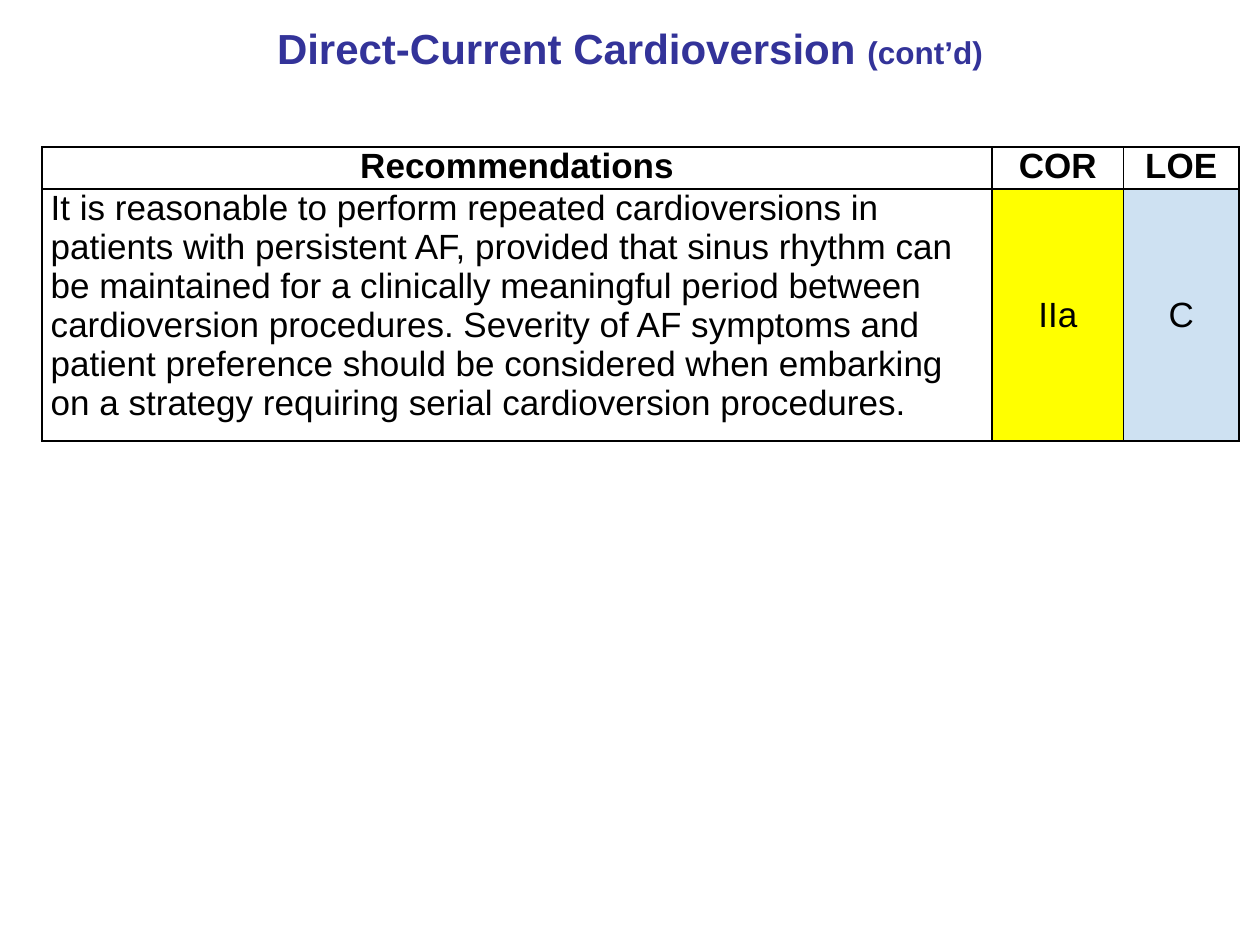
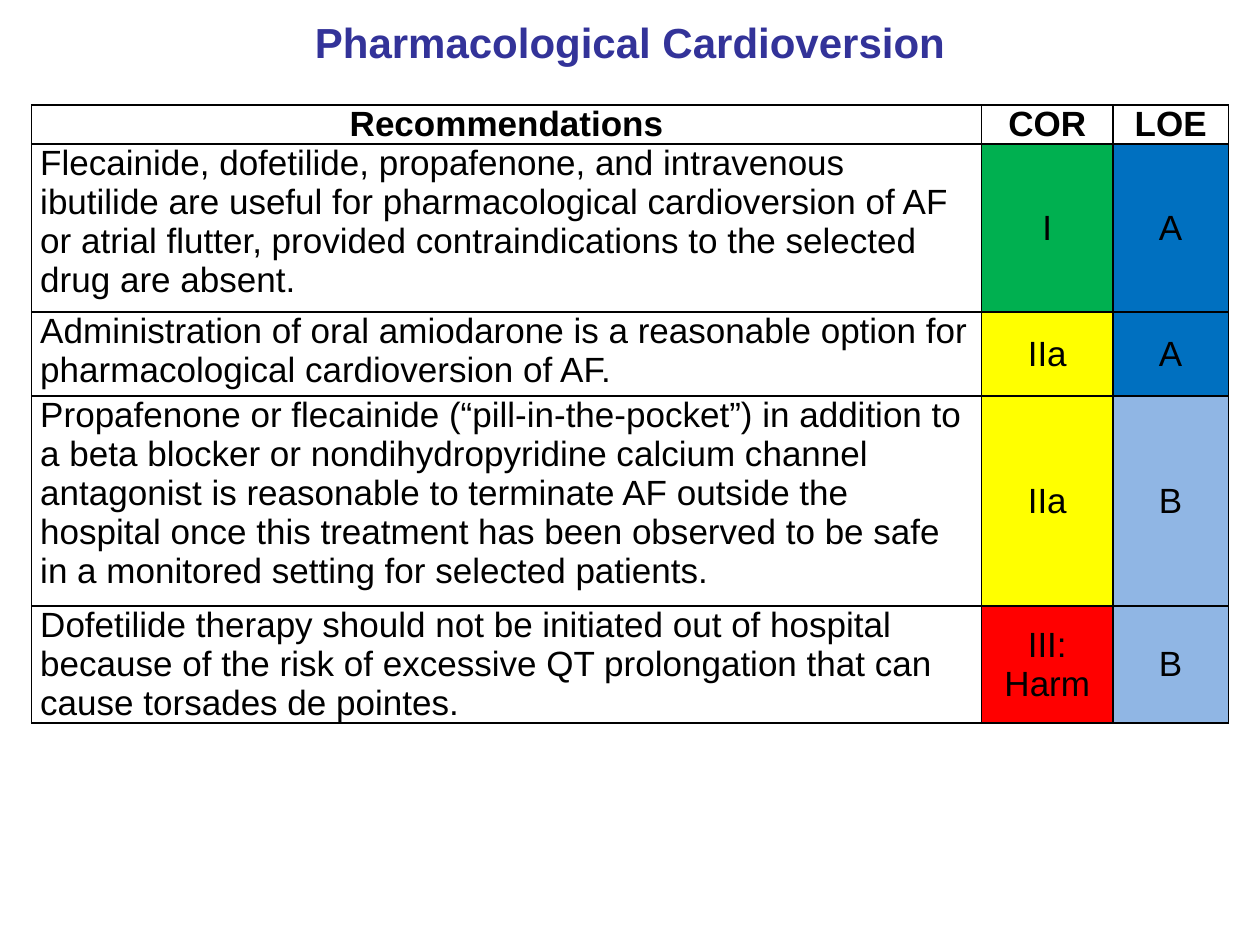
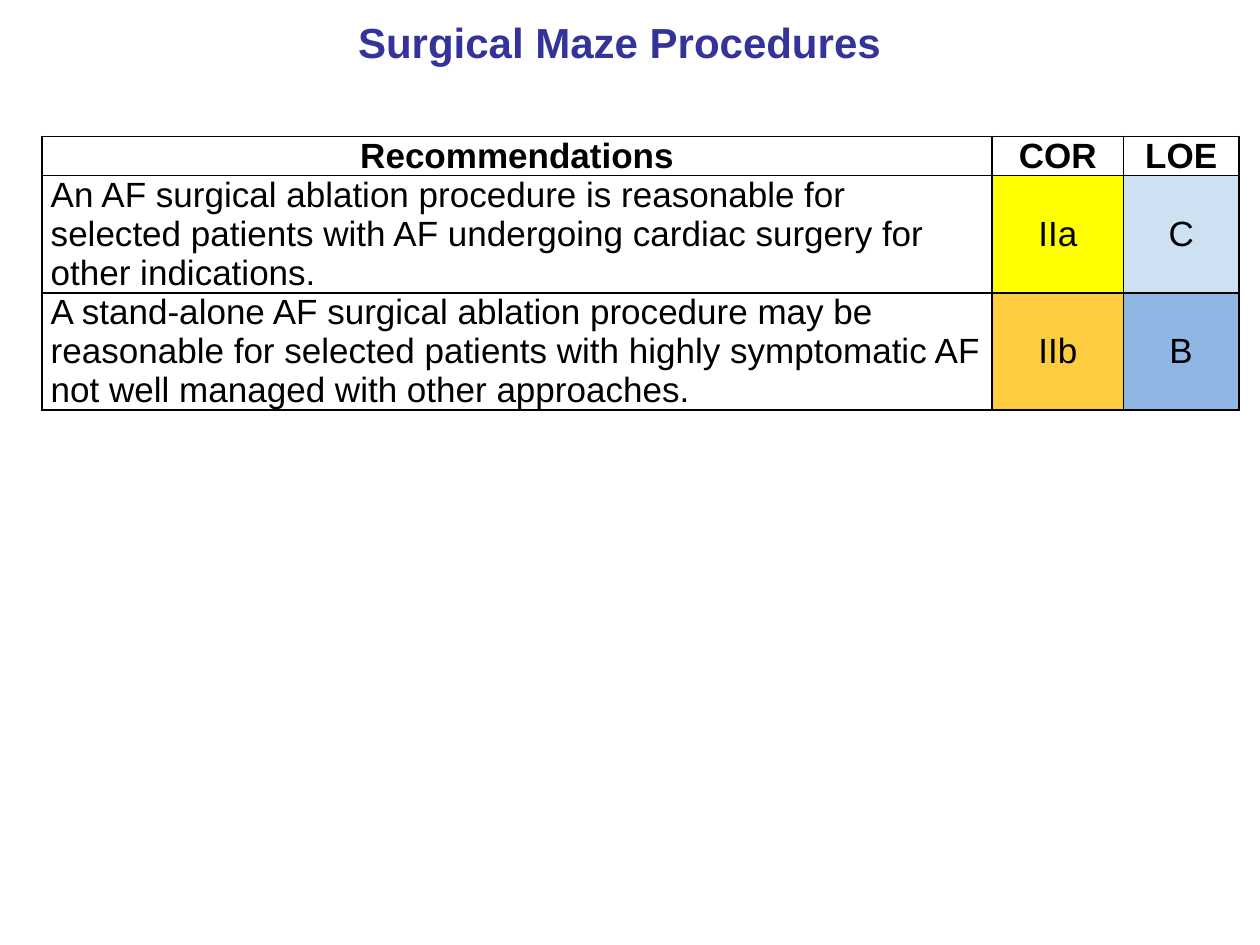
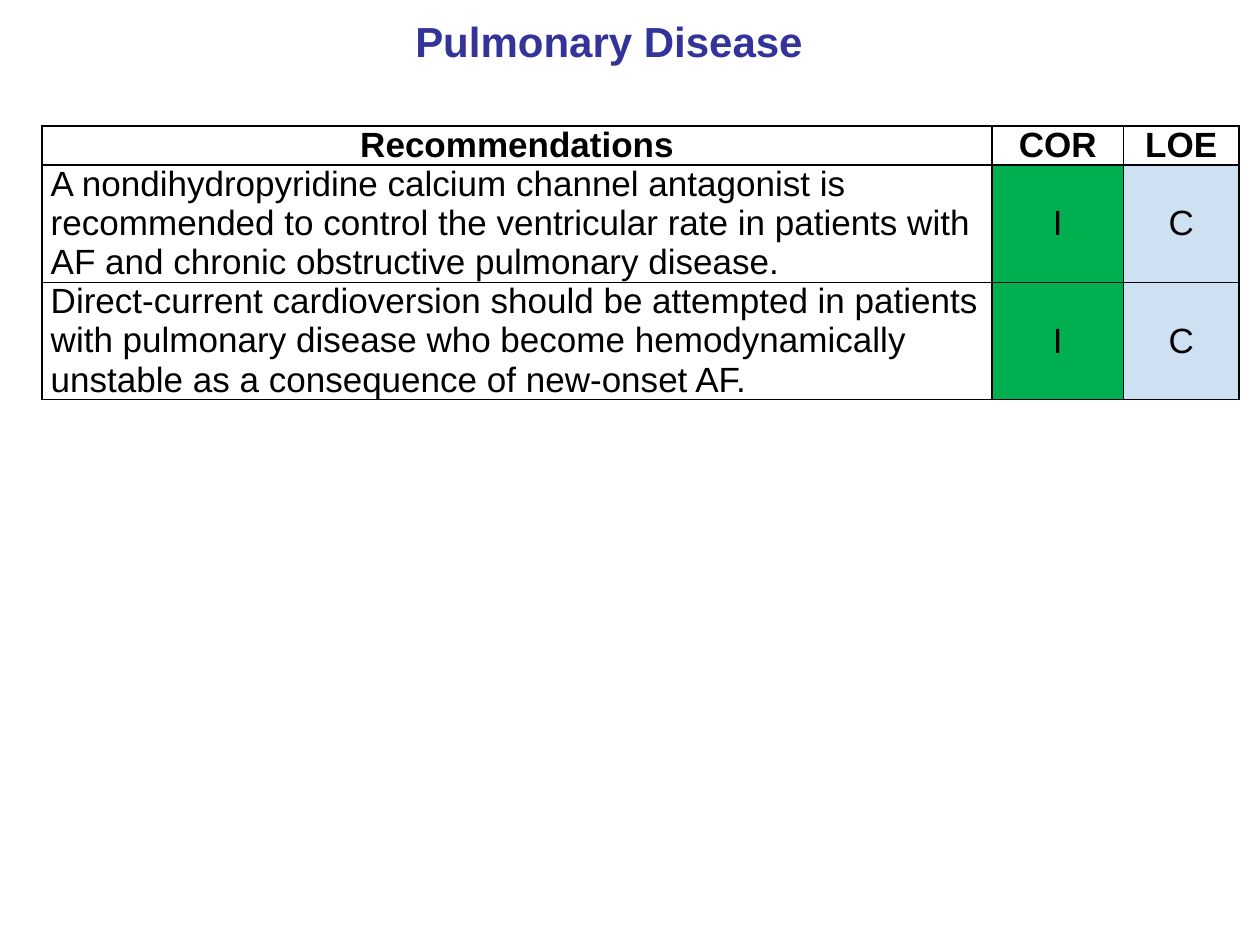
"""Build four slides of cardioversion and rhythm treatment recommendations."""
from lxml.etree import SubElement
from pptx import Presentation
from pptx.dml.color import RGBColor
from pptx.enum.text import MSO_ANCHOR, MSO_AUTO_SIZE, PP_ALIGN
from pptx.oxml.ns import qn
from pptx.util import Pt

COLORS = {
    "title": "333399",
    "text": "000000",
    "border": "000000",
    "I": "00B050",
    "IIa": "FFFF00",
    "IIb": "FDCC3F",
    "III: Harm": "FF0000",
    "A": "0070C0",
    "B": "90B6E4",
    "C": "CEE1F2",
}
FONT = "Arial"
HEADERS = ("Recommendations", "COR", "LOE")
COLUMN_WIDTHS = (543, 75, 66)
CELL_MARGINS = {"margin_left": Pt(5), "margin_right": Pt(5), "margin_top": 0, "margin_bottom": 0}

SLIDES = [
    {
        "title": [("Direct-Current Cardioversion ", 24), ("(cont’d)", 18)],
        "title_box": (36, 0, 648, 54),
        "table_box": (24, 84, 684, 168),
        "row_heights": (24, 144),
        "rows": [
            ("It is reasonable to perform repeated cardioversions in patients with persistent AF, "
             "provided that sinus rhythm can be maintained for a clinically meaningful period between "
             "cardioversion procedures. Severity of AF symptoms and patient preference should be "
             "considered when embarking on a strategy requiring serial cardioversion procedures.",
             "IIa", "C"),
        ],
    },
    {
        "title": [("Pharmacological Cardioversion", 24)],
        "title_box": (36, 0, 648, 48),
        "table_box": (18, 60, 684, 360),
        "row_heights": (22, 96, 48, 120, 66),
        "rows": [
            ("Flecainide, dofetilide, propafenone, and intravenous ibutilide are useful for "
             "pharmacological cardioversion of AF or atrial flutter, provided contraindications to "
             "the selected drug are absent.", "I", "A"),
            ("Administration of oral amiodarone is a reasonable option for pharmacological "
             "cardioversion of AF.", "IIa", "A"),
            ("Propafenone or flecainide (“pill-in-the-pocket”) in addition to a beta blocker or "
             "nondihydropyridine calcium channel antagonist is reasonable to terminate AF outside "
             "the hospital once this treatment has been observed to be safe in a monitored setting "
             "for selected patients.", "IIa", "B"),
            ("Dofetilide therapy should not be initiated out of hospital because of the risk of "
             "excessive QT prolongation that can cause torsades de pointes.", "III: Harm", "B"),
        ],
    },
    {
        "title": [("Surgical Maze Procedures", 24)],
        "title_box": (30, 0, 648, 48),
        "table_box": (24, 78, 684, 168),
        "row_heights": (22, 66, 66),
        "rows": [
            ("An AF surgical ablation procedure is reasonable for selected patients with AF "
             "undergoing cardiac surgery for other indications.", "IIa", "C"),
            ("A stand-alone AF surgical ablation procedure may be reasonable for selected patients "
             "with highly symptomatic AF not well managed with other approaches.", "IIb", "B"),
        ],
    },
    {
        "title": [("Pulmonary Disease", 24)],
        "title_box": (24, 6, 648, 35),
        "table_box": (24, 72, 684, 168),
        "row_heights": (22, 66, 66),
        "rows": [
            ("A nondihydropyridine calcium channel antagonist is recommended to control the "
             "ventricular rate in patients with AF and chronic obstructive pulmonary disease.",
             "I", "C"),
            ("Direct-current cardioversion should be attempted in patients with pulmonary disease "
             "who become hemodynamically unstable as a consequence of new-onset AF.", "I", "C"),
        ],
    },
]


def set_attributes(target, values):
    for name, value in values.items():
        setattr(target, name, value)


def add_run(paragraph, text, size, bold, color):
    run = paragraph.add_run()
    run.text = text
    set_attributes(run.font, {"name": FONT, "size": Pt(size), "bold": bold})
    run.font.color.rgb = RGBColor.from_string(COLORS[color])


def add_title(slide, runs, box):
    title = slide.shapes.title
    set_attributes(title, dict(zip(("left", "top", "width", "height"), map(Pt, box))))
    set_attributes(title.text_frame, {
        "word_wrap": True,
        "auto_size": MSO_AUTO_SIZE.NONE,
        "vertical_anchor": MSO_ANCHOR.MIDDLE,
    })
    paragraph = title.text_frame.paragraphs[0]
    paragraph.alignment = PP_ALIGN.CENTER
    for text, size in runs:
        add_run(paragraph, text, size, True, "title")


def add_borders(cell):
    properties = cell._tc.get_or_add_tcPr()
    for side in ("a:lnL", "a:lnR", "a:lnT", "a:lnB"):
        line = SubElement(properties, qn(side), w=str(Pt(1)))
        fill = SubElement(line, qn("a:solidFill"))
        SubElement(fill, qn("a:srgbClr"), val=COLORS["border"])


def fill_cell(cell, text, is_header, is_grade):
    add_borders(cell)
    set_attributes(cell, CELL_MARGINS)
    if is_grade and not is_header:
        cell.vertical_anchor = MSO_ANCHOR.MIDDLE
        cell.fill.solid()
        cell.fill.fore_color.rgb = RGBColor.from_string(COLORS[text])
    else:
        cell.fill.background()
    paragraph = cell.text_frame.paragraphs[0]
    paragraph.alignment = PP_ALIGN.CENTER if is_header or is_grade else PP_ALIGN.LEFT
    add_run(paragraph, text, 20, is_header, "text")


def add_recommendations(slide, rows, row_heights, box):
    grid = [HEADERS, *rows]
    frame = slide.shapes.add_table(len(grid), len(HEADERS), *map(Pt, box))
    table = frame.table
    set_attributes(table, {"first_row": False, "horz_banding": False})
    for column, width in zip(table.columns, COLUMN_WIDTHS):
        column.width = Pt(width)
    for row, height in zip(table.rows, row_heights):
        row.height = Pt(height)
    frame.height = Pt(box[3])
    for row_index, texts in enumerate(grid):
        for column_index, text in enumerate(texts):
            fill_cell(table.cell(row_index, column_index), text, row_index == 0, column_index > 0)


def main():
    presentation = Presentation()
    set_attributes(presentation, {"slide_width": Pt(720), "slide_height": Pt(540)})
    title_only = presentation.slide_layouts.get_by_name("Title Only")
    for content in SLIDES:
        slide = presentation.slides.add_slide(title_only)
        add_title(slide, content["title"], content["title_box"])
        add_recommendations(slide, content["rows"], content["row_heights"], content["table_box"])
    presentation.save("out.pptx")


if __name__ == "__main__":
    main()
